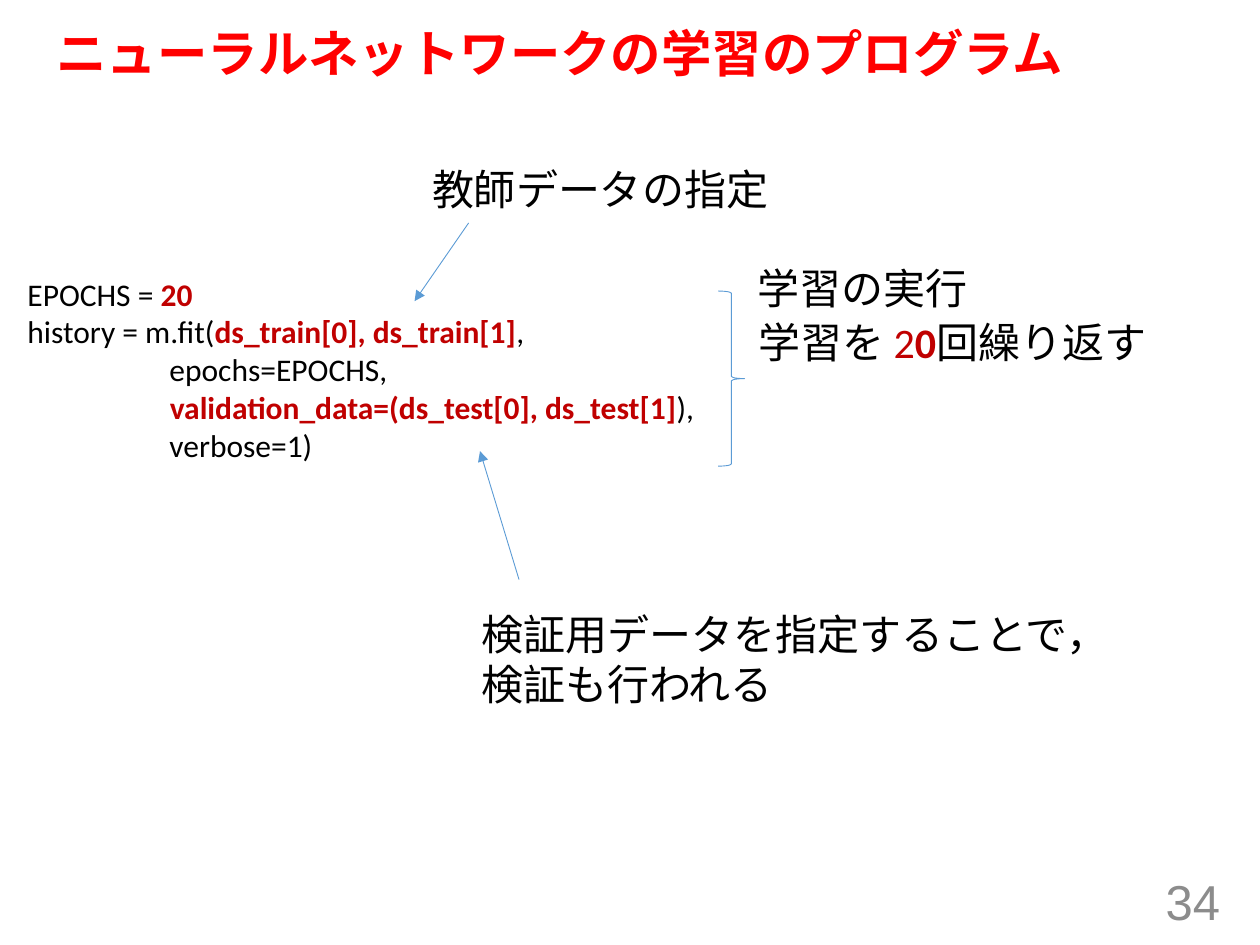
from dataclasses import dataclass

from lxml import etree
from pptx import Presentation
from pptx.dml.color import RGBColor
from pptx.enum.shapes import MSO_CONNECTOR, MSO_SHAPE
from pptx.enum.text import MSO_ANCHOR, PP_ALIGN
from pptx.oxml.ns import qn
from pptx.util import Pt

TOP, MIDDLE = MSO_ANCHOR.TOP, MSO_ANCHOR.MIDDLE
LEFT, RIGHT = PP_ALIGN.LEFT, PP_ALIGN.RIGHT
STRAIGHT = MSO_CONNECTOR.STRAIGHT
RIGHT_BRACE = MSO_SHAPE.RIGHT_BRACE


@dataclass(frozen=True)
class Theme:
    black: RGBColor = RGBColor(0x00, 0x00, 0x00)
    title: RGBColor = RGBColor(0xFF, 0x00, 0x00)
    accent: RGBColor = RGBColor(0xC0, 0x00, 0x00)
    line: RGBColor = RGBColor(0x5B, 0x9B, 0xD5)
    muted: RGBColor = RGBColor(0x8C, 0x8C, 0x8C)
    heading_font: str = "Arial"
    body_font: str = "Calibri"
    title_size: float = 28.8
    number_size: float = 28
    note_size: float = 24
    code_size: float = 18
    line_width: float = 0.5


T = Theme()


def add_text(slide, box, lines, size, font=T.body_font, anchor=TOP, align=LEFT, wrap=True):
    """Add a text box; each line is a list of (text, colour, bold) runs."""
    sp = slide.shapes.add_textbox(*map(Pt, box))
    tf = sp.text_frame
    tf.word_wrap = wrap
    tf.vertical_anchor = anchor
    for i, runs in enumerate(lines):
        p = tf.paragraphs[0] if i == 0 else tf.add_paragraph()
        p.alignment = align
        for text, color, bold in runs:
            r = p.add_run()
            r.text = text
            r.font.name = font
            r.font.size = Pt(size)
            r.font.bold = bold
            r.font.color.rgb = color
    return sp


prs = Presentation()
prs.slide_width, prs.slide_height = Pt(720), Pt(540)
slide = prs.slides.add_slide(prs.slide_layouts[6])

# Title and slide number
title = add_text(slide, (25.2, 13.7, 666, 36.7),
                 [[("ニューラルネットワークの学習のプログラム", T.title, True)]],
                 T.title_size, T.heading_font, MIDDLE)
title.text_frame.paragraphs[0].line_spacing = 0.9
add_text(slide, (542.2, 500.4, 162, 28.8), [[("34", T.muted, False)]],
         T.number_size, T.heading_font, MIDDLE, RIGHT)

# Training code
code = [
    [("EPOCHS = ", T.black, False), ("20", T.accent, True)],
    [("history = m.fit(", T.black, False),
     ("ds_train[0], ds_train[1]", T.accent, True), (",", T.black, False)],
    [("                    epochs=EPOCHS,", T.black, False)],
    [("                    ", T.black, False),
     ("validation_data=(ds_test[0], ds_test[1]", T.accent, True), ("),", T.black, False)],
    [("                    verbose=1)", T.black, False)],
]
add_text(slide, (8.6, 153.4, 702.7, 116.6), code, T.code_size)

# Notes around the code
notes = [
    ((239.8, 90, 208, 36), ["教師データの指定"]),
    ((425.5, 146.2, 135.4, 36), ["学習の実行"]),
    ((267.8, 344.2, 378, 65.5), ["検証用データを指定することで，", "検証も行われる"]),
]
for box, lines in notes:
    add_text(slide, box, [[(line, T.black, False)] for line in lines], T.note_size, wrap=False)

repeat_note = [("学習を ", T.black, False), ("2", T.accent, False),
               ("0", T.accent, True), ("回繰り返す", T.black, False)]
add_text(slide, (426.2, 177.1, 238.3, 36), [repeat_note], T.note_size)

# Brace beside the code
brace = slide.shapes.add_shape(RIGHT_BRACE, Pt(410.4), Pt(166.3), Pt(15.1), Pt(100.1))
brace.shadow.inherit = False
brace.fill.background()
brace.line.color.rgb = T.line
brace.line.width = Pt(T.line_width)

# Arrows from the notes to the code
for ends in [(267.8, 127.4, 236.9, 172.1), (296.6, 331.2, 274.3, 257.8)]:
    arrow = slide.shapes.add_connector(STRAIGHT, *map(Pt, ends))
    arrow.line.color.rgb = T.line
    arrow.line.width = Pt(T.line_width)
    etree.SubElement(arrow.line._get_or_add_ln(), qn("a:tailEnd"), type="triangle")
    etree.SubElement(arrow._element.spPr, qn("a:effectLst"))

prs.save("out.pptx")
